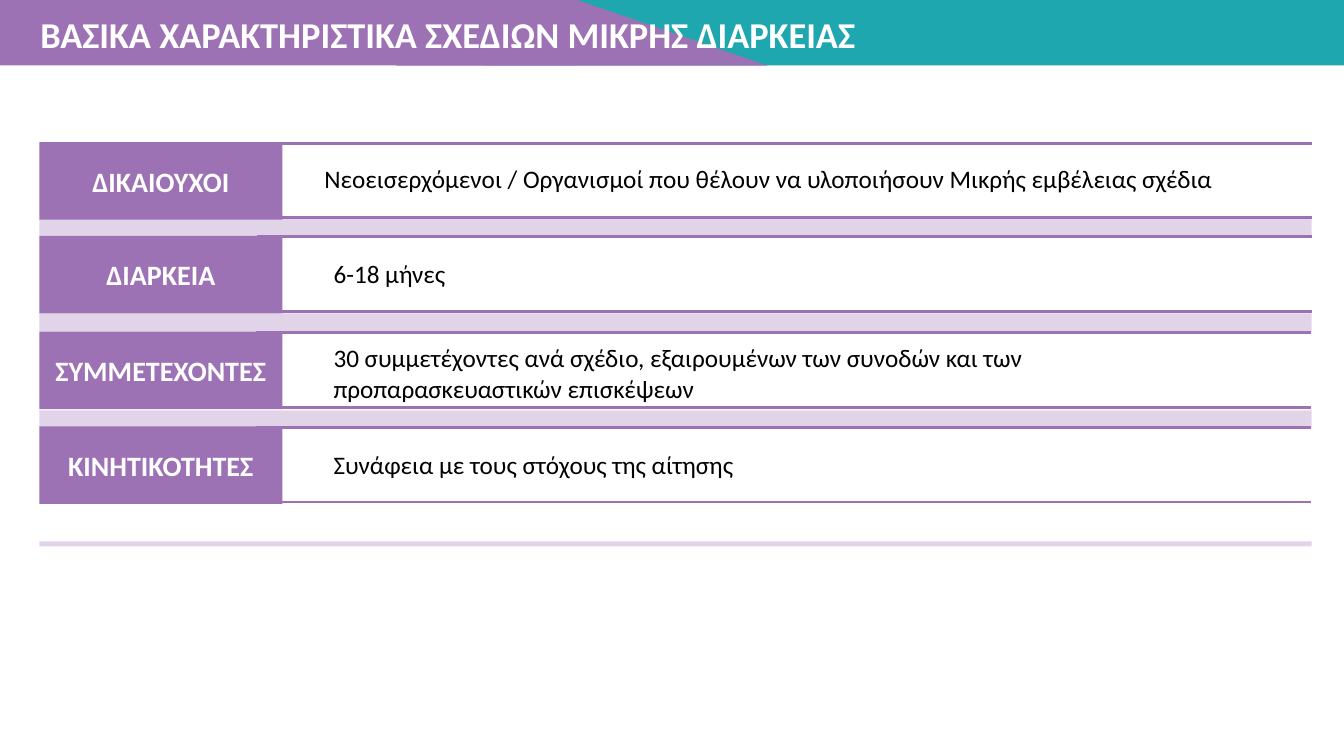
from dataclasses import dataclass

from lxml import etree
from pptx import Presentation
from pptx.dml.color import RGBColor
from pptx.enum.shapes import MSO_CONNECTOR, MSO_SHAPE
from pptx.enum.text import MSO_ANCHOR, MSO_AUTO_SIZE, PP_ALIGN
from pptx.oxml.ns import qn
from pptx.shapes.autoshape import Shape
from pptx.shapes.shapetree import GroupShapes, SlideShapes
from pptx.text.text import TextFrame
from pptx.util import Inches, Pt

RECTANGLE, TRIANGLE = MSO_SHAPE.RECTANGLE, MSO_SHAPE.ISOSCELES_TRIANGLE
STRAIGHT = MSO_CONNECTOR.STRAIGHT
LEFT, CENTER = PP_ALIGN.LEFT, PP_ALIGN.CENTER
TOP, MIDDLE = MSO_ANCHOR.TOP, MSO_ANCHOR.MIDDLE
TITLE_ONLY_LAYOUT = 5


@dataclass(frozen=True)
class Theme:
    font: str = "Calibri"
    purple: RGBColor = RGBColor(0x9D, 0x72, 0xB5)
    teal: RGBColor = RGBColor(0x1E, 0xA7, 0xAE)
    white: RGBColor = RGBColor(0xFF, 0xFF, 0xFF)
    black: RGBColor = RGBColor(0x00, 0x00, 0x00)
    title_size: int = 26
    label_size: int = 20
    body_size: int = 18
    rule_width: int = 2
    band_opacity: int = 30


@dataclass(frozen=True)
class Box:
    left: float
    top: float
    width: float
    height: float

    def lengths(self) -> tuple:
        return tuple(map(Inches, (self.left, self.top, self.width, self.height)))


@dataclass(frozen=True)
class Row:
    label: str
    text: str
    top: float
    rule_left: float
    text_box: Box


THEME = Theme()
TITLE = "ΒΑΣΙΚΑ ΧΑΡΑΚΤΗΡΙΣΤΙΚΑ ΣΧΕΔΙΩΝ ΜΙΚΡΗΣ ΔΙΑΡΚΕΙΑΣ"
TITLE_BOX = Box(0.3, 0.07, 8.37, 0.54)
BANNER_HEIGHT = 0.65
TABLE_LEFT, TABLE_WIDTH = 0.39, 12.62
LABEL_WIDTH, LABEL_HEIGHT = 2.41, 0.77
RULE_LENGTH = 10.46
RULE_OFFSETS = (0.75, 0.01)

ROWS = (
    Row("ΔΙΚΑΙΟΥΧΟΙ",
        "Νεοεισερχόμενοι / Οργανισμοί που θέλουν να υλοποιήσουν Μικρής εμβέλειας σχέδια",
        1.41, 2.55, Box(3.12, 1.57, 9.1, 0.4)),
    Row("ΔΙΑΡΚΕΙΑ", "6-18 μήνες", 2.34, 2.55, Box(3.21, 2.51, 5.02, 0.4)),
    Row("ΣΥΜΜΕΤΕΧΟΝΤΕΣ",
        "30 συμμετέχοντες ανά σχέδιο, εξαιρουμένων των συνοδών και των "
        "προπαρασκευαστικών επισκέψεων",
        3.29, 2.54, Box(3.21, 3.35, 9.1, 0.71)),
    Row("ΚΙΝΗΤΙΚΟΤΗΤΕΣ", "Συνάφεια με τους στόχους της αίτησης",
        4.23, 2.54, Box(3.21, 4.41, 9.8, 0.4)),
)
# Top and height of each pale band
BANDS = ((2.17, 0.18), (3.11, 0.18), (4.07, 0.18), (5.37, 0.05))


def write_text(frame: TextFrame, text: str, size: int, color: RGBColor,
               bold: bool = False, alignment: PP_ALIGN = LEFT,
               anchor: MSO_ANCHOR = TOP, wrap: bool = True,
               auto_size: MSO_AUTO_SIZE = MSO_AUTO_SIZE.NONE) -> None:
    frame_format = {"word_wrap": wrap, "vertical_anchor": anchor, "auto_size": auto_size}
    for name, value in frame_format.items():
        setattr(frame, name, value)
    paragraph = frame.paragraphs[0]
    paragraph.alignment = alignment
    run = paragraph.add_run()
    run.text = text
    font_format = {"name": THEME.font, "size": Pt(size), "bold": bold}
    for name, value in font_format.items():
        setattr(run.font, name, value)
    run.font.color.rgb = color


def add_block(shapes: SlideShapes | GroupShapes, box: Box, color: RGBColor,
              preset: MSO_SHAPE = RECTANGLE) -> Shape:
    shape = shapes.add_shape(preset, *box.lengths())
    shape.shadow.inherit = False
    shape.fill.solid()
    shape.fill.fore_color.rgb = color
    shape.line.fill.background()
    return shape


def add_rule(shapes: GroupShapes, left: float, top: float) -> None:
    rule = shapes.add_connector(STRAIGHT, Inches(left), Inches(top),
                                Inches(left + RULE_LENGTH), Inches(top))
    rule.line.color.rgb = THEME.purple
    rule.line.width = Pt(THEME.rule_width)
    etree.SubElement(rule.element.spPr, qn("a:effectLst"))


def add_banner(shapes: SlideShapes) -> None:
    add_block(shapes, Box(4.82, 0, 8.51, BANNER_HEIGHT), THEME.teal)
    purple_part = shapes.add_group_shape().shapes
    add_block(purple_part, Box(0, 0, 5.72, BANNER_HEIGHT), THEME.purple)
    slope = add_block(purple_part, Box(3.93, 0, 3.68, BANNER_HEIGHT), THEME.purple, TRIANGLE)
    slope.adjustments[0] = 0.488


def add_title(shapes: SlideShapes) -> None:
    title = shapes.title
    position = zip(("left", "top", "width", "height"), TITLE_BOX.lengths())
    for name, value in position:
        setattr(title, name, value)
    write_text(title.text_frame, TITLE, THEME.title_size, THEME.white, bold=True,
               wrap=False, auto_size=MSO_AUTO_SIZE.SHAPE_TO_FIT_TEXT)
    # Bring the title in front of the banner
    title.element.getparent().append(title.element)


def add_row(shapes: SlideShapes, row: Row) -> None:
    group = shapes.add_group_shape().shapes
    label = add_block(group, Box(TABLE_LEFT, row.top, LABEL_WIDTH, LABEL_HEIGHT), THEME.purple)
    write_text(label.text_frame, row.label, THEME.label_size, THEME.white,
               bold=True, alignment=CENTER, anchor=MIDDLE)
    for offset in RULE_OFFSETS:
        add_rule(group, row.rule_left, row.top + offset)
    text_box = shapes.add_textbox(*row.text_box.lengths())
    write_text(text_box.text_frame, row.text, THEME.body_size, THEME.black,
               auto_size=MSO_AUTO_SIZE.SHAPE_TO_FIT_TEXT)


def add_band(shapes: SlideShapes, top: float, height: float) -> None:
    band = add_block(shapes, Box(TABLE_LEFT, top, TABLE_WIDTH, height), THEME.purple)
    color = band.element.spPr.find(qn("a:solidFill")).find(qn("a:srgbClr"))
    etree.SubElement(color, qn("a:alpha"), val=str(THEME.band_opacity * 1000))


def main() -> None:
    presentation = Presentation()
    presentation.slide_width = Inches(13.33)
    presentation.slide_height = Inches(7.5)
    slide = presentation.slides.add_slide(presentation.slide_layouts[TITLE_ONLY_LAYOUT])

    # Header
    add_banner(slide.shapes)
    add_title(slide.shapes)

    # Characteristics and the bands between them
    for row in ROWS:
        add_row(slide.shapes, row)
    for top, height in BANDS:
        add_band(slide.shapes, top, height)

    presentation.save("out.pptx")


if __name__ == "__main__":
    main()
